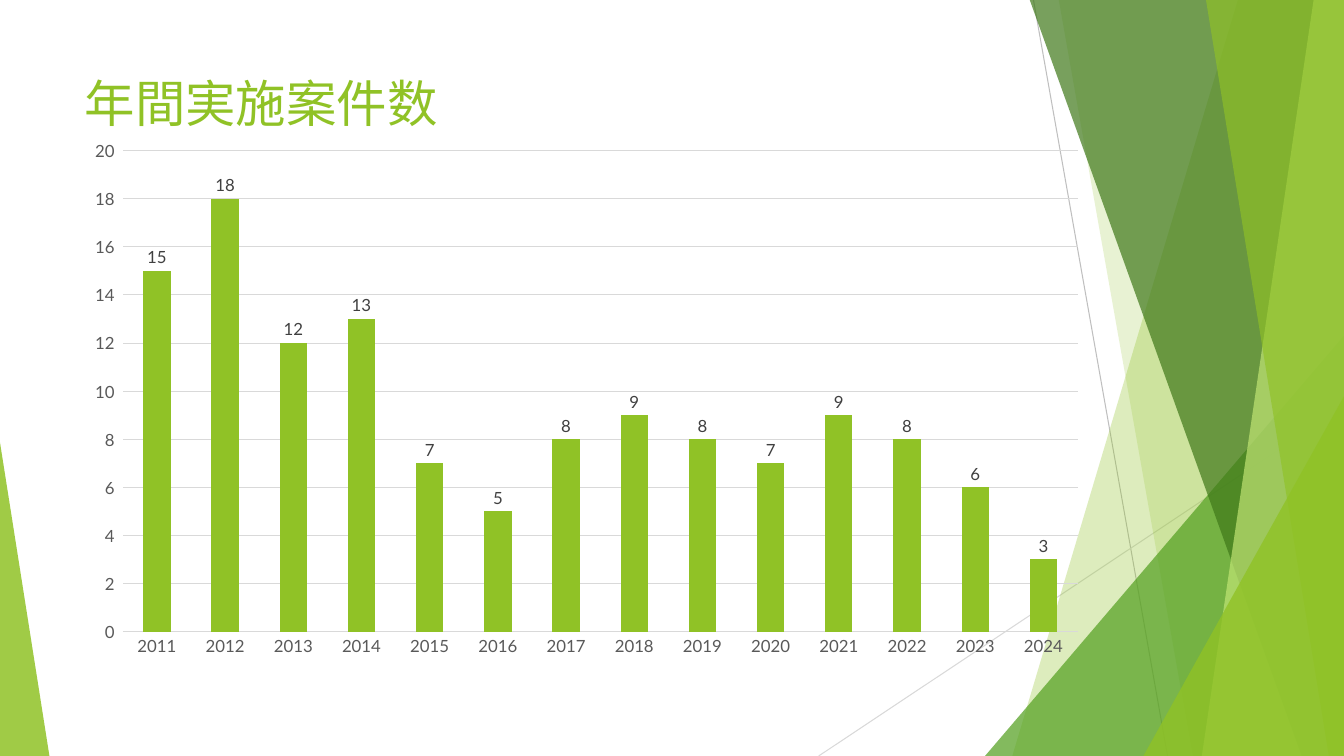
from lxml import etree
from pptx import Presentation
from pptx.chart.data import CategoryChartData
from pptx.dml.color import RGBColor
from pptx.enum.chart import XL_CHART_TYPE as ChartType
from pptx.enum.chart import XL_LABEL_POSITION as LabelPosition
from pptx.enum.chart import XL_TICK_MARK as TickMark
from pptx.enum.shapes import MSO_CONNECTOR as Connector
from pptx.enum.shapes import MSO_SHAPE as Shape
from pptx.enum.text import MSO_ANCHOR as Anchor
from pptx.enum.text import PP_ALIGN as Align
from pptx.oxml.ns import qn
from pptx.util import Inches, Pt

FONT = "Lato"
LIME = RGBColor(0x90, 0xC2, 0x26)
PALE_LIME = RGBColor(0xC0, 0xE4, 0x74)
GREEN = RGBColor(0x54, 0xA0, 0x21)
DARK_GREEN = RGBColor(0x3F, 0x78, 0x19)
MID_GREY = RGBColor(0xBF, 0xBF, 0xBF)
LIGHT_GREY = RGBColor(0xD9, 0xD9, 0xD9)
AXIS_GREY = RGBColor(0x59, 0x59, 0x59)
LABEL_GREY = RGBColor(0x40, 0x40, 0x40)
BLACK = RGBColor(0, 0, 0)

WIDTH, HEIGHT = 13.33, 7.5
BAND_TOP = -0.01

FIRST_YEAR = 2011
CASES = [15, 18, 12, 13, 7, 5, 8, 9, 8, 7, 9, 8, 6, 3]

# top-left x, bottom-left x, colour, opacity in percent
BACK_BANDS = [(12.28, 10.04, LIME, 30), (10.5, 11.83, LIME, 20)]
FRONT_BANDS = [
    (10.21, 12.91, DARK_GREEN, 70),
    (13.03, 11.92, PALE_LIME, 70),
    (11.96, 13.18, LIME, 65),
]


class SlideBuilder:
    def __init__(self, presentation):
        self.slide = presentation.slides.add_slide(presentation.slide_layouts[5])
        self.shapes = self.slide.shapes

    def set_font(self, font, size, color):
        font.name = FONT
        font.size = Pt(size)
        font.color.rgb = color

    def set_line(self, line, color):
        line.color.rgb = color
        line.width = Pt(0.75)

    def paint(self, shape, color, opacity):
        shape.shadow.inherit = False
        shape.line.fill.background()
        shape.fill.solid()
        shape.fill.fore_color.rgb = color
        color_element = shape.fill._xPr.find(qn("a:solidFill"))[0]
        etree.SubElement(color_element, qn("a:alpha"), val=str(opacity * 1000))

    def line(self, x1, y1, x2, y2, color):
        connector = self.shapes.add_connector(
            Connector.STRAIGHT, Inches(x1), Inches(y1), Inches(x2), Inches(y2))
        self.set_line(connector.line, color)
        etree.SubElement(connector.element.spPr, qn("a:effectLst"))

    def band(self, top_x, bottom_x, color, opacity):
        """Add a band from a slanted left edge to the slide's right edge."""
        builder = self.shapes.build_freeform(Inches(top_x), Inches(BAND_TOP))
        corners = [(WIDTH, BAND_TOP), (WIDTH, HEIGHT), (bottom_x, HEIGHT)]
        builder.add_line_segments([(Inches(x), Inches(y)) for x, y in corners])
        self.paint(builder.convert_to_shape(), color, opacity)

    def triangle(self, left, top, width, apex, color, opacity):
        """Add a triangle standing on the slide's bottom edge."""
        shape = self.shapes.add_shape(
            Shape.ISOSCELES_TRIANGLE, Inches(left), Inches(top),
            Inches(width), Inches(HEIGHT - top))
        shape.adjustments[0] = apex
        self.paint(shape, color, opacity)

    def title(self, text, left, top, width, height):
        title = self.shapes.title
        title.left, title.top = Inches(left), Inches(top)
        title.width, title.height = Inches(width), Inches(height)
        frame = title.text_frame
        frame.text = text
        frame.word_wrap = True
        frame.vertical_anchor = Anchor.TOP
        paragraph = frame.paragraphs[0]
        paragraph.alignment = Align.LEFT
        self.set_font(paragraph.font, 36, LIME)

    def column_chart(self, categories, values, left, top, width, height):
        data = CategoryChartData()
        data.categories = categories
        data.add_series("Series 1", values)
        chart = self.shapes.add_chart(
            ChartType.COLUMN_CLUSTERED, Inches(left), Inches(top),
            Inches(width), Inches(height), data).chart
        chart.has_legend = False
        chart.has_title = False
        self.set_font(chart.font, 10, BLACK)

        for axis in (chart.category_axis, chart.value_axis):
            axis.major_tick_mark = axis.minor_tick_mark = TickMark.NONE
            self.set_font(axis.tick_labels.font, 12, AXIS_GREY)
        self.set_line(chart.category_axis.format.line, LIGHT_GREY)
        value_axis = chart.value_axis
        value_axis.minimum_scale, value_axis.maximum_scale = 0, 20
        value_axis.major_unit = 2
        value_axis.format.line.fill.background()
        self.set_line(value_axis.major_gridlines.format.line, LIGHT_GREY)
        value_axis.tick_labels.number_format = r"#,##0_);[Red]\(#,##0\)"
        value_axis.tick_labels.number_format_is_linked = False

        plot = chart.plots[0]
        plot.gap_width = 150
        plot.vary_by_categories = False
        series = plot.series[0]
        series.format.fill.solid()
        series.format.fill.fore_color.rgb = LIME
        labels = series.data_labels
        labels.show_value = True
        labels.position = LabelPosition.OUTSIDE_END
        self.set_font(labels.font, 12, LABEL_GREY)


def main():
    presentation = Presentation()
    presentation.slide_width = Inches(WIDTH)
    presentation.slide_height = Inches(HEIGHT)
    builder = SlideBuilder(presentation)

    builder.line(10.25, 0, 11.58, HEIGHT, MID_GREY)
    builder.line(WIDTH, 4.03, 8.12, HEIGHT, LIGHT_GREY)
    for band in BACK_BANDS:
        builder.band(*band)
    builder.triangle(9.77, 3.33, 3.56, 1, GREEN, 72)
    for band in FRONT_BANDS:
        builder.band(*band)
    builder.triangle(11.34, 3.93, 1.99, 1, LIME, 80)
    builder.triangle(0, 4.39, 0.49, 0, LIME, 85)

    builder.title("年間実施案件数", 0.74, 0.67, 9.4, 0.77)
    years = [str(FIRST_YEAR + index) for index in range(len(CASES))]
    builder.column_chart(years, CASES, 0.74, 1.29, 10.15, 5.32)
    presentation.save("out.pptx")


if __name__ == "__main__":
    main()
